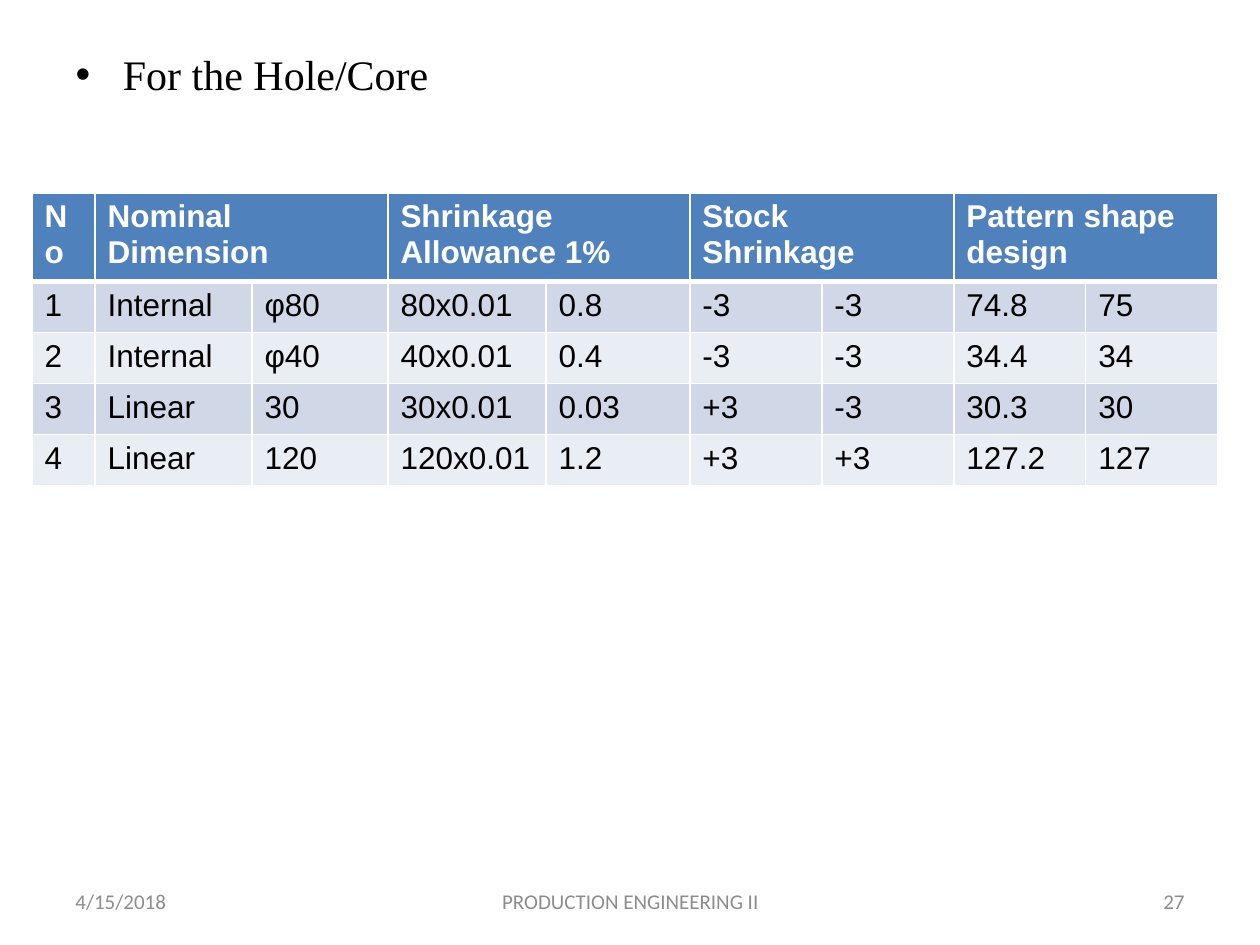
"""Build the hole/core pattern allowance slide with its table and footer."""
from lxml import etree
from pptx import Presentation
from pptx.dml.color import RGBColor
from pptx.enum.text import MSO_ANCHOR, PP_ALIGN
from pptx.oxml.ns import qn
from pptx.util import Emu, Pt

LEFT, CENTER, RIGHT = PP_ALIGN.LEFT, PP_ALIGN.CENTER, PP_ALIGN.RIGHT
MIDDLE = MSO_ANCHOR.MIDDLE
EMU_PER_PX = 914400 / 126
COLORS = {
    "black": "000000",
    "white": "FFFFFF",
    "header": "4F81BD",
    "odd_row": "D0D8E8",
    "even_row": "E9EDF4",
    "footer": "8C8C8C",
}


def px(length):
    return Emu(round(length * EMU_PER_PX))


def add_span(para, text, font, size, color, bold=False):
    span = para.add_run()
    span.text = text
    span.font.name = font
    span.font.size = Pt(size)
    span.font.bold = bold
    span.font.color.rgb = RGBColor.from_string(COLORS[color])


deck = Presentation()
deck.slide_width, deck.slide_height = px(1260), px(945)
page = deck.slides.add_slide(deck.slide_layouts[1])
title, body = page.placeholders
title.element.getparent().remove(title.element)

body.left, body.top, body.width, body.height = px(63), px(42), px(1134), px(803)
add_span(body.text_frame.paragraphs[0], "For the Hole/Core", "Times New Roman", 24, "black")

footers = [
    (63, 294, "4/15/2018", LEFT),
    (431, 399, "PRODUCTION ENGINEERING II", CENTER),
    (903, 294, "27", RIGHT),
]
for left, width, text, alignment in footers:
    box = page.shapes.add_textbox(px(left), px(876), px(width), px(50))
    box.text_frame.word_wrap = True
    box.text_frame.vertical_anchor = MIDDLE
    para = box.text_frame.paragraphs[0]
    para.alignment = alignment
    add_span(para, text, "Calibri", 12, "footer")

column_widths = [63, 157, 136, 158, 144, 132, 132, 132, 132]
rows = [
    ["No", "Nominal Dimension", "", "Shrinkage Allowance 1%", "",
     "Stock Shrinkage", "", "Pattern shape design", ""],
    ["1", "Internal", "φ80", "80x0.01", "0.8", "-3", "-3", "74.8", "75"],
    ["2", "Internal", "φ40", "40x0.01", "0.4", "-3", "-3", "34.4", "34"],
    ["3", "Linear", "30", "30x0.01", "0.03", "+3", "-3", "30.3", "30"],
    ["4", "Linear", "120", "120x0.01", "1.2", "+3", "+3", "127.2", "127"],
]
row_height = 51
table = page.shapes.add_table(
    len(rows), len(column_widths), px(32), px(193),
    px(sum(column_widths)), px(row_height * len(rows)),
).table
for column, width in zip(table.columns, column_widths):
    column.width = px(width)
for row in table.rows:
    row.height = px(row_height)

for row_index, texts in enumerate(rows):
    is_header = row_index == 0
    fill = "header" if is_header else "odd_row" if row_index % 2 else "even_row"
    for column_index, text in enumerate(texts):
        cell = table.cell(row_index, column_index)
        properties = cell._tc.get_or_add_tcPr()
        for side in ("lnL", "lnR", "lnT", "lnB"):
            thick = (is_header and side == "lnB") or (row_index == 1 and side == "lnT")
            line = etree.SubElement(properties, qn(f"a:{side}"), w=str(Pt(3 if thick else 1)))
            solid = etree.SubElement(line, qn("a:solidFill"))
            etree.SubElement(solid, qn("a:srgbClr"), val=COLORS["white"])
        cell.fill.solid()
        cell.fill.fore_color.rgb = RGBColor.from_string(COLORS[fill])
        if text:
            add_span(cell.text_frame.paragraphs[0], text, "Arial", 18,
                     "white" if is_header else "black", is_header)

for column_index in range(1, len(column_widths), 2):
    table.cell(0, column_index).merge(table.cell(0, column_index + 1))

deck.save("out.pptx")
